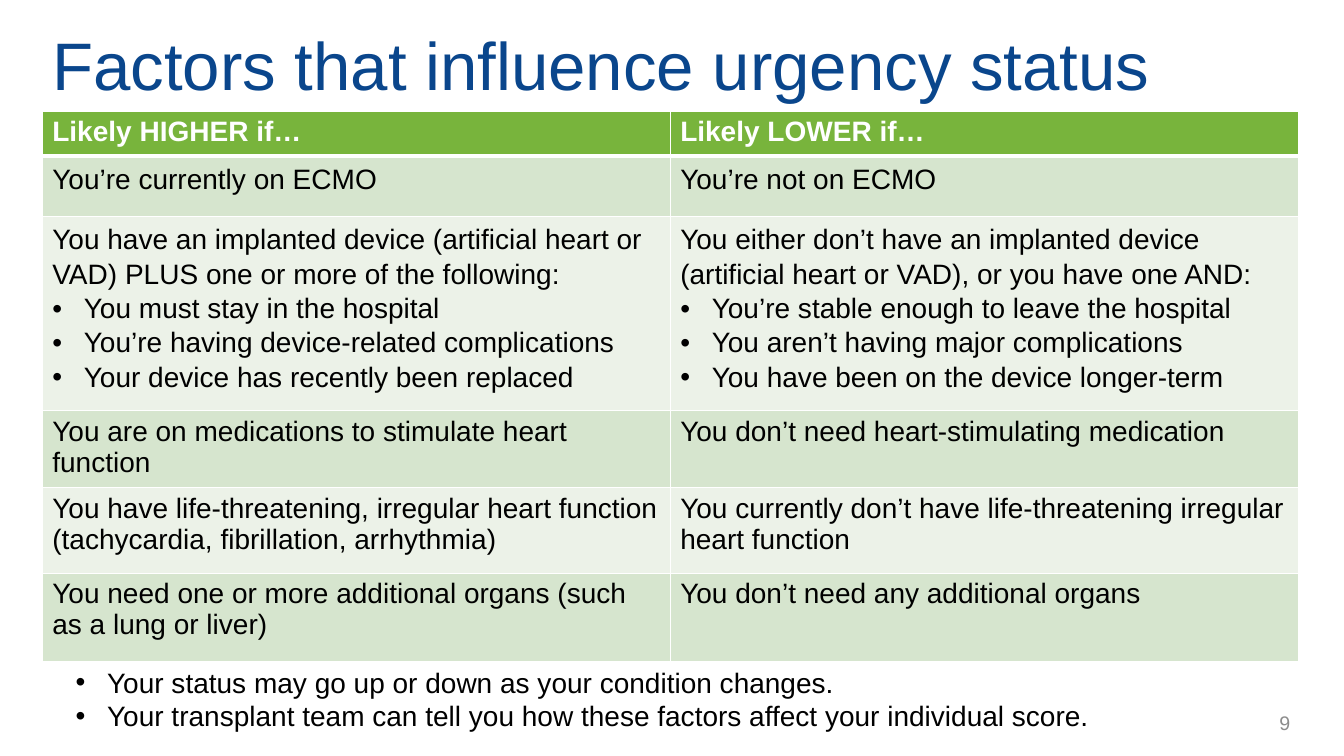
from lxml.etree import SubElement
from pptx import Presentation
from pptx.dml.color import RGBColor
from pptx.enum.text import MSO_ANCHOR, MSO_AUTO_SIZE, PP_ALIGN
from pptx.oxml.ns import qn
from pptx.util import Pt

TITLE = "Factors that influence urgency status"
PAGE_NUMBER = "9"
BULLET = "• "

# Each row: height, line spacing, (higher cell, lower cell) as paragraphs
ROWS = [
    (32, 1.0, (["Likely HIGHER if…"], ["Likely LOWER if…"])),
    (43, 1.1, (["You’re currently on ECMO"], ["You’re not on ECMO"])),
    (139, 1.1, (
        ["You have an implanted device (artificial heart or VAD) PLUS one or more of the following:",
         "• You must stay in the hospital",
         "• You’re having device-related complications",
         "• Your device has recently been replaced"],
        ["You either don’t have an implanted device (artificial heart or VAD), or you have one AND:",
         "• You’re stable enough to leave the hospital",
         "• You aren’t having major complications",
         "• You have been on the device longer-term"])),
    (55, 1.0, (["You are on medications to stimulate heart function"],
               ["You don’t need heart-stimulating medication"])),
    (61, 1.0, (["You have life-threatening, irregular heart function (tachycardia, fibrillation, arrhythmia)"],
               ["You currently don’t have life-threatening irregular heart function"])),
    (63, 1.0, (["You need one or more additional organs (such as a lung or liver)"],
               ["You don’t need any additional organs"])),
]
NOTES = [
    "• Your status may go up or down as your condition changes.",
    "• Your transplant team can tell you how these factors affect your individual score.",
]

COLORS = {"title": "0A468C", "header": "78B43C", "dark band": "D6E5CE",
          "light band": "ECF2E8", "white": "FFFFFF", "text": "000000", "number": "8C8C8C"}
BOXES = {"title": (30.2, 12.2, 917.3, 67), "table": (30.2, 79.5, 897.1, 393),
         "notes": (46.8, 471.6, 884.9, 55.4), "number": (766.1, 501.8, 162.7, 28.8)}


def color(name):
    return RGBColor.from_string(COLORS[name])


def place(shape, box):
    for side, value in zip(("left", "top", "width", "height"), BOXES[box]):
        setattr(shape, side, Pt(value))


def add_bullet(paragraph, indent=22.5):
    properties = paragraph._p.get_or_add_pPr()
    properties.set("marL", str(Pt(indent)))
    properties.set("indent", str(-Pt(indent)))
    SubElement(properties, qn("a:buFont"), typeface="Arial")
    SubElement(properties, qn("a:buChar"), char="•")


def write(frame, lines, size, color_name, bold=False, spacing=1.0, align=PP_ALIGN.LEFT):
    """Fill a text frame; lines that start with a bullet become list items."""
    frame.word_wrap = True
    for index, line in enumerate(lines):
        paragraph = frame.add_paragraph() if index else frame.paragraphs[0]
        if line.startswith(BULLET):
            add_bullet(paragraph)
        paragraph.text = line.removeprefix(BULLET)
        layout = {"line_spacing": spacing, "space_before": Pt(0),
                  "space_after": Pt(0), "alignment": align}
        for name, value in layout.items():
            setattr(paragraph, name, value)
        for name, value in {"name": "Arial", "size": Pt(size), "bold": bold}.items():
            setattr(paragraph.runs[0].font, name, value)
        paragraph.runs[0].font.color.rgb = color(color_name)


def add_borders(cell, widths):
    properties = cell._tc.get_or_add_tcPr()
    for side, width in widths.items():
        line = SubElement(properties, qn(f"a:ln{side}"), w=str(Pt(width)))
        SubElement(SubElement(line, qn("a:solidFill")), qn("a:srgbClr"), val=COLORS["white"])


def add_factor_table(slide):
    frame = slide.shapes.add_table(len(ROWS), 2, *map(Pt, BOXES["table"]))
    table = frame.table
    for column in table.columns:
        column.width = Pt(BOXES["table"][2] / 2)
    for row, (height, spacing, cells) in enumerate(ROWS):
        table.rows[row].height = Pt(height)
        header = row == 0
        band = "header" if header else "dark band" if row % 2 else "light band"
        for column, lines in enumerate(cells):
            cell = table.cell(row, column)
            add_borders(cell, {"L": 1, "R": 1, "T": 3 if row == 1 else 1, "B": 3 if header else 1})
            cell.fill.solid()
            cell.fill.fore_color.rgb = color(band)
            write(cell.text_frame, lines, 20, "white" if header else "text", header, spacing)


def main():
    presentation = Presentation()
    presentation.slide_width, presentation.slide_height = Pt(960), Pt(540)
    slide = presentation.slides.add_slide(presentation.slide_layouts[1])

    add_factor_table(slide)

    title, notes = slide.shapes.title, slide.placeholders[1]
    number = slide.shapes.add_textbox(0, 0, 0, 0)
    for shape, box, anchor in ((title, "title", MSO_ANCHOR.MIDDLE),
                               (notes, "notes", MSO_ANCHOR.TOP),
                               (number, "number", MSO_ANCHOR.MIDDLE)):
        place(shape, box)
        shape.text_frame.auto_size = MSO_AUTO_SIZE.NONE
        shape.text_frame.vertical_anchor = anchor
    write(title.text_frame, [TITLE], 48, "title")
    write(notes.text_frame, NOTES, 20, "text")
    write(number.text_frame, [PAGE_NUMBER], 14, "number", align=PP_ALIGN.RIGHT)

    presentation.save("out.pptx")


if __name__ == "__main__":
    main()
